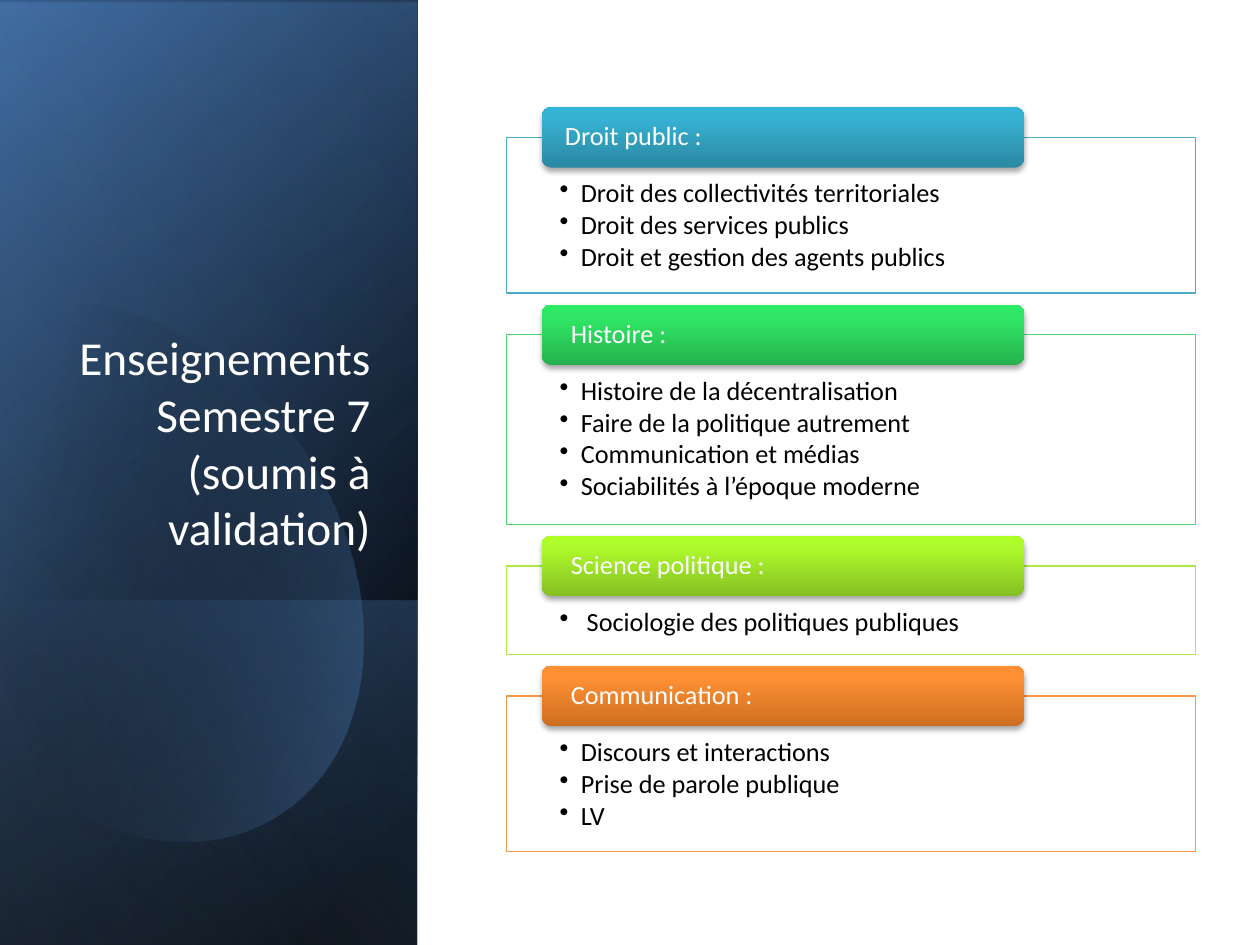
from math import cos, radians, sin

from pptx import Presentation
from pptx.dml.color import RGBColor
from pptx.enum.shapes import MSO_SHAPE
from pptx.enum.text import MSO_ANCHOR, PP_ALIGN
from pptx.oxml import parse_xml
from pptx.oxml.ns import nsdecls, qn
from pptx.util import Cm, Pt

COLORS = {
    "black": "000000",
    "white": "FFFFFF",
    "navy": "376092",
    "blue": "4F81BD",
    "pale": "95B3D7",
}
FONT = "Calibri"
SIDEBAR_WIDTH = 8.41
PANEL_LEFT, PANEL_WIDTH, PANEL_GAP = 10.21, 13.89, 0.84
HEADER_LEFT, HEADER_WIDTH, HEADER_HEIGHT = 10.92, 9.73, 1.22

SUBJECTS = [
    ("Droit public :", "4BACC6", ("2A88A2", "37B1D2", "34B4D6"),
     ["Droit des collectivités territoriales", "Droit des services publics",
      "Droit et gestion des agents publics"]),
    (" Histoire :", "47D872", ("25B24E", "30E765", "2DEB64"),
     ["Histoire de la décentralisation", "Faire de la politique autrement",
      "Communication et médias", "Sociabilités à l’époque moderne"]),
    (" Science politique :", "ACE946", ("85C022", "ADF92C", "AFFE28"),
     [" Sociologie des politiques publiques"]),
    (" Communication :", "F79646", ("CC6E20", "FF9034", "FF9136"),
     ["Discours et interactions", "Prise de parole publique", "LV"]),
]


def set_gradient(shape, stops, angle):
    marks = "".join(
        f'<a:gs pos="{position * 1000}"><a:srgbClr val="{color}">'
        f'<a:alpha val="{alpha * 1000}"/></a:srgbClr></a:gs>'
        for position, color, alpha in stops
    )
    shape.fill.background()
    properties = shape._element.spPr
    properties.replace(properties.find(qn("a:noFill")), parse_xml(
        f'<a:gradFill {nsdecls("a")} rotWithShape="1"><a:gsLst>{marks}</a:gsLst>'
        f'<a:lin ang="{angle * 60000}" scaled="0"/></a:gradFill>'
    ))
    shape.line.fill.background()
    shape.shadow.inherit = False


def add_soft_shadow(shape):
    effects = shape._element.spPr.find(qn("a:effectLst"))
    effects.append(parse_xml(
        f'<a:outerShdw {nsdecls("a")} blurRad="{Pt(3.1)}" dist="{Pt(1.8)}" '
        f'dir="5400000" rotWithShape="0"><a:srgbClr val="{COLORS["black"]}">'
        '<a:alpha val="35000"/></a:srgbClr></a:outerShdw>'
    ))


def set_insets(frame, left, top, right, bottom):
    frame.margin_left, frame.margin_top = Cm(left), Cm(top)
    frame.margin_right, frame.margin_bottom = Cm(right), Cm(bottom)


def style_paragraph(para, size, color, align=PP_ALIGN.LEFT):
    para.alignment = align
    para.font.name = FONT
    para.font.size = Pt(size)
    para.font.color.rgb = RGBColor.from_string(COLORS[color])


def add_bullet(para):
    properties = para._p.get_or_add_pPr()
    properties.set("marL", str(Cm(0.43)))
    properties.set("indent", str(-Cm(0.43)))
    properties.append(parse_xml(f'<a:buChar {nsdecls("a")} char="•"/>'))


def add_sidebar_layer(page, top, height, stops, angle):
    layer = page.shapes.add_shape(
        MSO_SHAPE.RECTANGLE,
        Cm((SIDEBAR_WIDTH - height) / 2), Cm(top + (height - SIDEBAR_WIDTH) / 2),
        Cm(height), Cm(SIDEBAR_WIDTH),
    )
    layer.rotation = 90
    layer._element.spPr.find(qn("a:xfrm")).set("flipH", "1")
    set_gradient(layer, stops, angle)


def curve_points(start, first, second, end, steps=24):
    for step in range(1, steps + 1):
        t = step / steps
        weights = ((1 - t) ** 3, 3 * t * (1 - t) ** 2, 3 * t * t * (1 - t), t ** 3)
        yield tuple(
            sum(weight * value for weight, value in zip(weights, values))
            for values in zip(start, first, second, end)
        )


def add_sidebar_oval(page):
    left, top, width, height, turn = -1.04, 2.69, 8.13, 11.61, radians(-16.1)
    points = [(2.44, 2.9)]
    curves = [
        ((4.34, 3.1), (6.2, 4.88), (6.93, 7.37)),
        ((7.8, 10.46), (6.65, 13.49), (4.34, 14.15)),
        ((2.9, 14.58), (1.35, 13.97), (0.18, 12.7)),
    ]
    for curve in curves:
        points.extend(curve_points(points[-1], *curve))
    points += [(-0.08, 12.4), (-0.64, 4.22), (-0.38, 3.91)]
    for curve in [((0.05, 3.48), (0.56, 3.18), (1.14, 3)),
                  ((1.57, 2.87), (2.01, 2.84), (2.44, 2.9))]:
        points.extend(curve_points(points[-1], *curve))

    def place(point):
        across, down = point[0] - width / 2, point[1] - height / 2
        return (Cm(left + width / 2 + across * cos(turn) - down * sin(turn)),
                Cm(top + height / 2 + across * sin(turn) + down * cos(turn)))

    outline = [place(point) for point in points]
    builder = page.shapes.build_freeform(*outline[0])
    builder.add_line_segments(outline[1:], close=True)
    oval = builder.convert_to_shape()
    set_gradient(oval, [(29, COLORS["black"], 0), (100, COLORS["blue"], 43)], 14)


def add_sidebar(page):
    black, blue = COLORS["black"], COLORS["blue"]
    add_sidebar_layer(page, 0, 19.05, [(8, black, 100), (100, COLORS["navy"], 100)], 50)
    add_sidebar_layer(page, 0.05, 19.05, [(0, black, 0), (99, blue, 46)], 30)
    add_sidebar_layer(page, 12.1, 6.96, [(2, blue, 29), (100, black, 30)], 130)
    add_sidebar_oval(page)
    add_sidebar_layer(page, 0, 19.05, [(0, black, 0), (99, COLORS["pale"], 11)], 120)


def add_title(page, text):
    box = page.shapes.add_textbox(Cm(1.22), Cm(4.67), Cm(6.5), Cm(6.65))
    frame = box.text_frame
    frame.word_wrap = True
    frame.vertical_anchor = MSO_ANCHOR.BOTTOM
    para = frame.paragraphs[0]
    para.text = text
    style_paragraph(para, 27, "white", PP_ALIGN.RIGHT)


def add_panel(page, top, height, color, courses):
    panel = page.shapes.add_shape(
        MSO_SHAPE.RECTANGLE, Cm(PANEL_LEFT), Cm(top), Cm(PANEL_WIDTH), Cm(height))
    panel.shadow.inherit = False
    panel.fill.solid()
    panel.fill.fore_color.rgb = RGBColor.from_string(COLORS["white"])
    panel.line.color.rgb = RGBColor.from_string(color)
    panel.line.width = Pt(0.75)
    frame = panel.text_frame
    frame.word_wrap = True
    frame.vertical_anchor = MSO_ANCHOR.TOP
    set_insets(frame, 1.07, 0.86, 1.07, 0.3)
    for index, course in enumerate(courses):
        para = frame.add_paragraph() if index else frame.paragraphs[0]
        para.text = course
        para.line_spacing = 0.9
        para.space_after = Pt(2)
        style_paragraph(para, 15, "black")
        add_bullet(para)


def add_header(page, middle, text, shades):
    header = page.shapes.add_shape(
        MSO_SHAPE.ROUNDED_RECTANGLE, Cm(HEADER_LEFT), Cm(middle - HEADER_HEIGHT / 2),
        Cm(HEADER_WIDTH), Cm(HEADER_HEIGHT))
    stops = [(position, shade, 100) for position, shade in zip((0, 80, 100), shades)]
    set_gradient(header, stops, 270)
    add_soft_shadow(header)
    frame = header.text_frame
    frame.word_wrap = True
    frame.vertical_anchor = MSO_ANCHOR.MIDDLE
    set_insets(frame, 0.41, 0, 0.41, 0)
    para = frame.paragraphs[0]
    para.text = text
    para.line_spacing = 0.9
    style_paragraph(para, 15, "white")


def main():
    deck = Presentation()
    deck.slide_width, deck.slide_height = Cm(25.4), Cm(19.05)
    page = deck.slides.add_slide(deck.slide_layouts[6])
    add_sidebar(page)
    add_title(page, "Enseignements\vSemestre 7\v(soumis à validation)")
    top = 2.77
    for name, color, shades, courses in SUBJECTS:
        height = 1.1 + 0.68 * len(courses)
        add_panel(page, top, height, color, courses)
        add_header(page, top, name, shades)
        top += height + PANEL_GAP
    deck.save("out.pptx")


if __name__ == "__main__":
    main()
